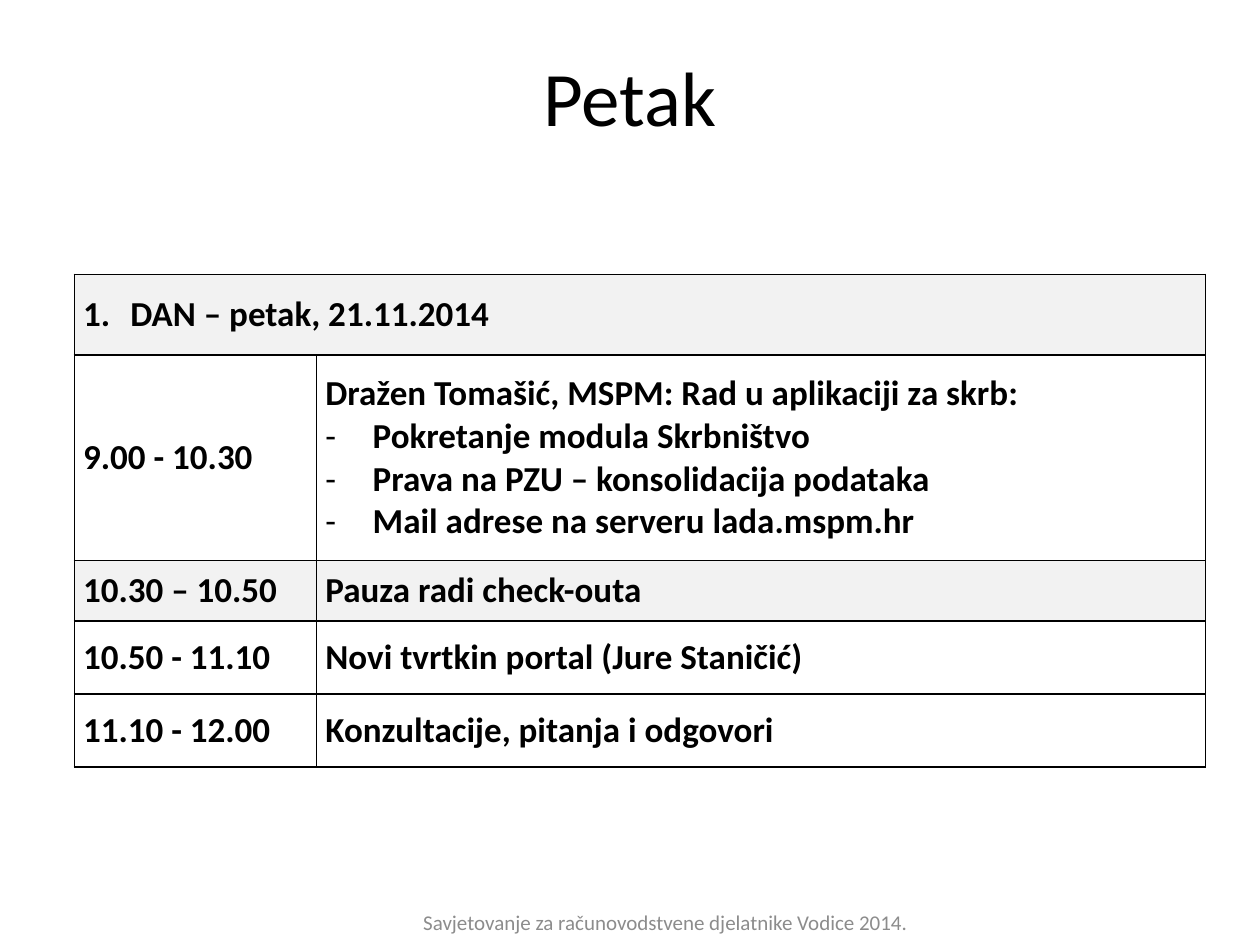
import pptx
import pptx.dml.color
import pptx.enum.text
import pptx.oxml.ns
import pptx.util
from lxml import etree

Pt = pptx.util.Pt
Align = pptx.enum.text.PP_ALIGN
Anchor = pptx.enum.text.MSO_ANCHOR
BLACK, GREY, SHADE = "000000", "8C8C8C", "F2F2F2"


def colour(value):
    return pptx.dml.color.RGBColor.from_string(value)


def add_xml(parent, tag, **attributes):
    return etree.SubElement(parent, pptx.oxml.ns.qn(tag), attributes)


class SlideWriter:
    font = "Calibri"
    hanging = Pt(27)
    cell_margin = Pt(5)

    def __init__(self, slide):
        self.slide = slide

    def style(self, paragraph, size, hex_colour=BLACK, bold=False):
        for run in paragraph.runs:
            run.font.name = self.font
            run.font.size = Pt(size)
            run.font.bold = bold
            run.font.color.rgb = colour(hex_colour)

    def text(self, wording, left, top, width, height, size, hex_colour):
        frame = self.slide.shapes.add_textbox(
            Pt(left), Pt(top), Pt(width), Pt(height)).text_frame
        frame.word_wrap = True
        frame.vertical_anchor = Anchor.MIDDLE
        frame.text = wording
        frame.paragraphs[0].alignment = Align.CENTER
        self.style(frame.paragraphs[0], size, hex_colour)

    def bullet(self, paragraph, mark):
        properties = paragraph._p.get_or_add_pPr()
        properties.set("marL", str(self.hanging))
        properties.set("indent", str(-self.hanging))
        add_xml(properties, "a:buFont", typeface=self.font)
        if mark == "1.":
            add_xml(properties, "a:buAutoNum", type="arabicPeriod")
            tabs = add_xml(properties, "a:tabLst")
            add_xml(tabs, "a:tab", pos=str(Pt(36)), algn="l")
        else:
            add_xml(properties, "a:buChar", char=mark)

    def borders(self, cell):
        properties = cell._tc.get_or_add_tcPr()
        for side in ("a:lnL", "a:lnR", "a:lnT", "a:lnB"):
            line = add_xml(properties, side, w=str(Pt(1)))
            add_xml(add_xml(line, "a:solidFill"), "a:srgbClr", val=BLACK)

    def cell(self, cell, lines, shaded):
        cell.margin_left = cell.margin_right = self.cell_margin
        cell.margin_top = cell.margin_bottom = 0
        cell.vertical_anchor = Anchor.MIDDLE
        self.borders(cell)
        if shaded:
            cell.fill.solid()
            cell.fill.fore_color.rgb = colour(SHADE)
        else:
            cell.fill.background()
        frame = cell.text_frame
        frame.text = "\n".join(wording for mark, wording in lines)
        for paragraph, (mark, wording) in zip(frame.paragraphs, lines):
            if mark:
                self.bullet(paragraph, mark)
            self.style(paragraph, 20, bold=True)

    def table(self, rows, left, top, widths, heights, shaded_rows):
        table = self.slide.shapes.add_table(
            len(rows), len(widths), Pt(left), Pt(top),
            Pt(sum(widths)), Pt(sum(heights))).table
        table.first_row = table.horz_banding = False
        for column, width in zip(table.columns, widths):
            column.width = Pt(width)
        for number, (row, height) in enumerate(zip(rows, heights)):
            table.rows[number].height = Pt(height)
            for position, lines in enumerate(row):
                self.cell(table.cell(number, position), lines,
                          number in shaded_rows)
        return table


def main():
    deck = pptx.Presentation()
    deck.slide_width, deck.slide_height = Pt(720), Pt(540)
    writer = SlideWriter(deck.slides.add_slide(deck.slide_layouts[6]))

    # Title and footer
    writer.text("Petak", 36, 9.5, 648, 90, 44, BLACK)
    writer.text("Savjetovanje za računovodstvene djelatnike Vodice 2014.",
                219, 512.5, 322.5, 28.75, 12, GREY)

    # Friday's programme: each cell is a list of (bullet mark, wording)
    programme = [
        [[("1.", "DAN – petak, 21.11.2014")], []],
        [[("", "9.00 - 10.30")],
         [("", "Dražen Tomašić, MSPM: Rad u aplikaciji za skrb:"),
          ("-", "Pokretanje modula Skrbništvo"),
          ("-", "Prava na PZU – konsolidacija podataka"),
          ("-", "Mail adrese na serveru lada.mspm.hr")]],
        [[("", "10.30 – 10.50")], [("", "Pauza radi check-outa")]],
        [[("", "10.50 - 11.10")],
         [("", "Novi tvrtkin portal (Jure Staničić)")]],
        [[("", "11.10 - 12.00")], [("", "Konzultacije, pitanja i odgovori")]],
    ]
    schedule = writer.table(programme, 42.5, 156.75, [138.5, 508],
                            [46, 117.5, 34.75, 41.75, 41.75], {0, 2})
    schedule.cell(0, 0).merge(schedule.cell(0, 1))

    deck.save("out.pptx")


if __name__ == "__main__":
    main()
